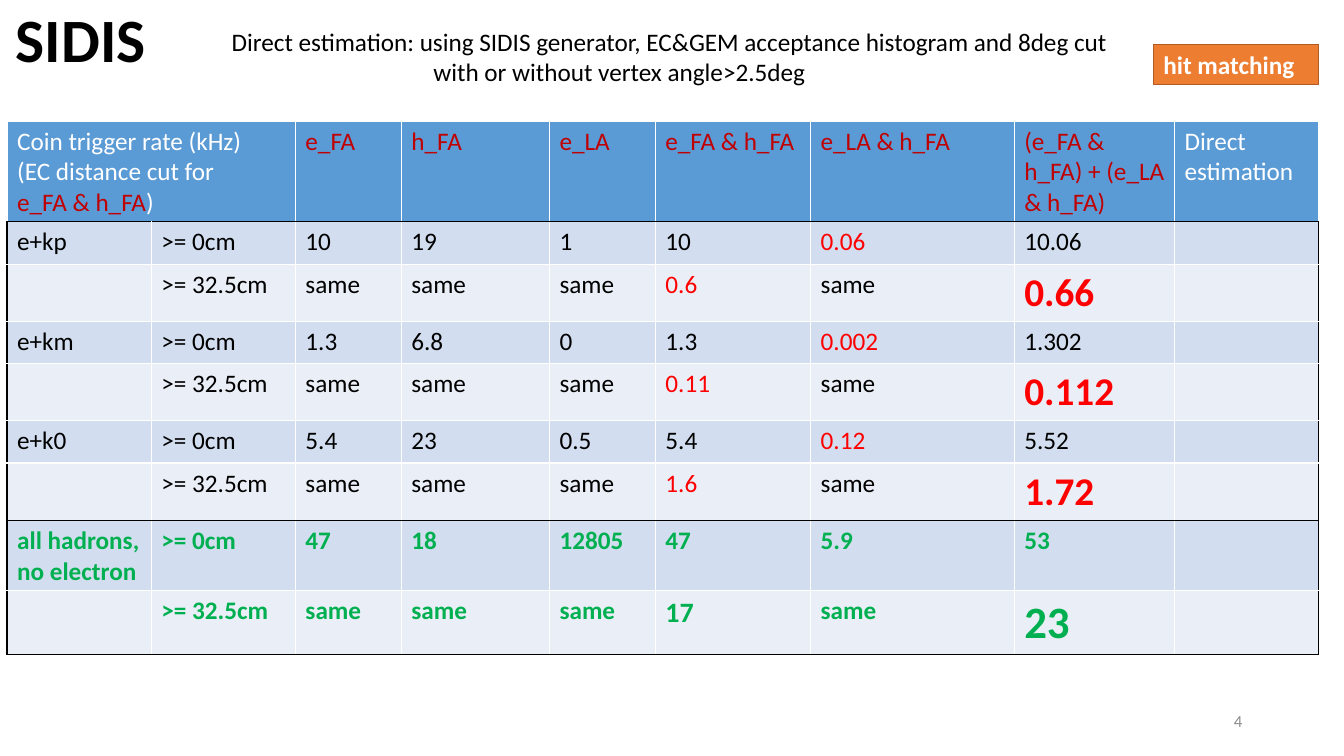
from dataclasses import dataclass

import lxml.etree
import pptx
import pptx.dml.color
import pptx.enum.shapes
import pptx.enum.text
import pptx.oxml.ns
import pptx.util

PX = pptx.util.Inches(0.01)
ALIGN = pptx.enum.text.PP_ALIGN
ANCHOR = pptx.enum.text.MSO_ANCHOR


@dataclass(frozen=True)
class Theme:
    font: str = "Calibri"
    black: str = "000000"
    white: str = "FFFFFF"
    grey: str = "8C8C8C"
    red: str = "FF0000"
    dark_red: str = "C00000"
    green: str = "00B050"
    orange: str = "ED7D31"
    orange_edge: str = "AF5C24"
    header: str = "5B9BD5"
    bands: tuple[str, str] = ("D2DEEF", "EAEFF7")
    small: int = 12
    body: int = 18
    medium: int = 20
    result: int = 28
    large: int = 32
    title: int = 44


THEME = Theme()


@dataclass(frozen=True)
class Style:
    color: str = THEME.black
    size: int = THEME.body
    bold: bool = False


@dataclass(frozen=True)
class Area:
    left: int
    top: int
    width: int
    height: int

    def emu(self) -> tuple[int, int, int, int]:
        return self.left * PX, self.top * PX, self.width * PX, self.height * PX


@dataclass(frozen=True)
class Sample:
    """Trigger rates of one channel, without and with the EC distance cut."""
    name: str
    uncut: tuple[str, ...]
    cut_pair: str
    cut_total: str
    plain: Style = Style()
    marked: Style = Style(THEME.red)
    pair: Style = Style(THEME.red)
    total: Style = Style(THEME.red, THEME.result, True)


GREEN = Style(THEME.green, bold=True)
SAMPLES = [
    Sample("e+kp", ("10", "19", "1", "10", "0.06", "10.06"), "0.6", "0.66"),
    Sample("e+km", ("1.3", "6.8", "0", "1.3", "0.002", "1.302"), "0.11", "0.112"),
    Sample("e+k0", ("5.4", "23", "0.5", "5.4", "0.12", "5.52"), "1.6", "1.72"),
    Sample("all hadrons, no electron", ("47", "18", "12805", "47", "5.9", "53"), "17", "23",
           plain=GREEN, marked=GREEN,
           pair=Style(THEME.green, THEME.medium, True),
           total=Style(THEME.green, THEME.large, True)),
]
RATE_HEADERS = ["e_FA", "h_FA", "e_LA", "e_FA & h_FA", "e_LA & h_FA",
                "(e_FA & h_FA) + (e_LA & h_FA)"]
COLUMN_WIDTHS = [143, 143, 105, 147, 105, 154, 202, 159, 143]
ROW_HEIGHTS = [46] + [42] * (2 * len(SAMPLES))
LAST_COLUMN = len(COLUMN_WIDTHS) - 1
RULED_BELOW = {0, 6, 8}
TABLE_AREA = Area(7, 120, 1301, 558)


def rgb(color: str) -> pptx.dml.color.RGBColor:
    return pptx.dml.color.RGBColor.from_string(color)


def style_paragraph(para, style: Style) -> None:
    para.font.name = THEME.font
    para.font.size = pptx.util.Pt(style.size)
    para.font.bold = style.bold
    para.font.color.rgb = rgb(style.color)


def write(frame, text: str, style: Style) -> None:
    """Put each line of the text in its own styled paragraph."""
    frame.text = text
    for para in frame.paragraphs:
        style_paragraph(para, style)


def add_text(page, area: Area, text: str, style: Style, anchor=ANCHOR.TOP):
    frame = page.shapes.add_textbox(*area.emu()).text_frame
    frame.word_wrap = True
    frame.vertical_anchor = anchor
    write(frame, text, style)
    return frame


def set_borders(cell, row: int, column: int) -> None:
    black_sides = {
        "L": row > 0 and column == 0,
        "R": row > 0 and column == LAST_COLUMN,
        "T": row - 1 in RULED_BELOW,
        "B": row in RULED_BELOW,
    }
    properties = cell._tc.get_or_add_tcPr()
    qn = pptx.oxml.ns.qn
    for index, (side, is_black) in enumerate(black_sides.items()):
        line = lxml.etree.Element(qn(f"a:ln{side}"), w=str(pptx.util.Pt(1)))
        fill = lxml.etree.SubElement(line, qn("a:solidFill"))
        color = THEME.black if is_black else THEME.white
        lxml.etree.SubElement(fill, qn("a:srgbClr"), val=color)
        properties.insert(index, line)


def write_headers(table) -> None:
    corner = table.cell(0, 0)
    corner.merge(table.cell(0, 1))
    write(corner.text_frame, "Coin trigger rate (kHz)\n(EC distance cut for\n",
          Style(THEME.white))
    last_line = corner.text_frame.paragraphs[-1]
    for text, color in (("e_FA & h_FA", THEME.dark_red), (")", THEME.white)):
        span = last_line.add_run()
        span.text = text
        span.font.color.rgb = rgb(color)
    for column, header in enumerate(RATE_HEADERS, start=2):
        write(table.cell(0, column).text_frame, header, Style(THEME.dark_red))
    write(table.cell(0, LAST_COLUMN).text_frame, "Direct estimation", Style(THEME.white))


def write_sample(table, row: int, sample: Sample) -> None:
    plain = sample.plain
    uncut_texts = [sample.name, ">= 0cm", *sample.uncut]
    uncut_styles = [plain] * 6 + [sample.marked, plain]
    cut_texts = ["", ">= 32.5cm", "same", "same", "same", sample.cut_pair, "same",
                 sample.cut_total]
    cut_styles = [plain] * 5 + [sample.pair, plain, sample.total]
    lines = ((uncut_texts, uncut_styles), (cut_texts, cut_styles))
    for offset, (texts, styles) in enumerate(lines):
        for column, (text, style) in enumerate(zip(texts, styles)):
            write(table.cell(row + offset, column).text_frame, text, style)


def add_rate_table(page) -> None:
    graphic = page.shapes.add_table(len(ROW_HEIGHTS), len(COLUMN_WIDTHS), *TABLE_AREA.emu())
    table = graphic.table
    table.first_row = False
    table.horz_banding = False
    for column, width in zip(table.columns, COLUMN_WIDTHS):
        column.width = width * PX
    for row, height in zip(table.rows, ROW_HEIGHTS):
        row.height = height * PX
    graphic.height = TABLE_AREA.height * PX
    for row in range(len(ROW_HEIGHTS)):
        for column in range(len(COLUMN_WIDTHS)):
            cell = table.cell(row, column)
            cell.fill.solid()
            cell.fill.fore_color.rgb = rgb(THEME.bands[(row - 1) % 2] if row else THEME.header)
            set_borders(cell, row, column)
    write_headers(table)
    for index, sample in enumerate(SAMPLES):
        write_sample(table, 1 + 2 * index, sample)


def add_tag(page, area: Area, text: str) -> None:
    tag = page.shapes.add_shape(pptx.enum.shapes.MSO_SHAPE.RECTANGLE, *area.emu())
    tag.shadow.inherit = False
    tag.fill.solid()
    tag.fill.fore_color.rgb = rgb(THEME.orange)
    tag.line.color.rgb = rgb(THEME.orange_edge)
    tag.line.width = pptx.util.Pt(1)
    tag.text_frame.vertical_anchor = ANCHOR.TOP
    write(tag.text_frame, text, Style(THEME.white, bold=True))
    tag.text_frame.paragraphs[0].alignment = ALIGN.LEFT


def main() -> None:
    deck = pptx.Presentation()
    deck.slide_width, deck.slide_height = 1333 * PX, 750 * PX
    page = deck.slides.add_slide(deck.slide_layouts[6])

    number = add_text(page, Area(942, 695, 300, 40), "4", Style(THEME.grey, THEME.small),
                      ANCHOR.MIDDLE)
    number.paragraphs[0].alignment = ALIGN.RIGHT
    add_rate_table(page)
    add_tag(page, Area(1144, 44, 164, 40), "hit matching")
    method = add_text(
        page, Area(220, 21, 911, 71),
        "Direct estimation: using SIDIS generator, EC&GEM acceptance histogram and 8deg cut\n"
        "with or without vertex angle>2.5deg", Style())
    method.paragraphs[1]._p.get_or_add_pPr().set("marL", str(200 * PX))
    title = add_text(page, Area(6, -13, 1150, 111), "SIDIS",
                     Style(size=THEME.title, bold=True), ANCHOR.MIDDLE)
    title.paragraphs[0].line_spacing = 0.9
    deck.save("out.pptx")


if __name__ == "__main__":
    main()
